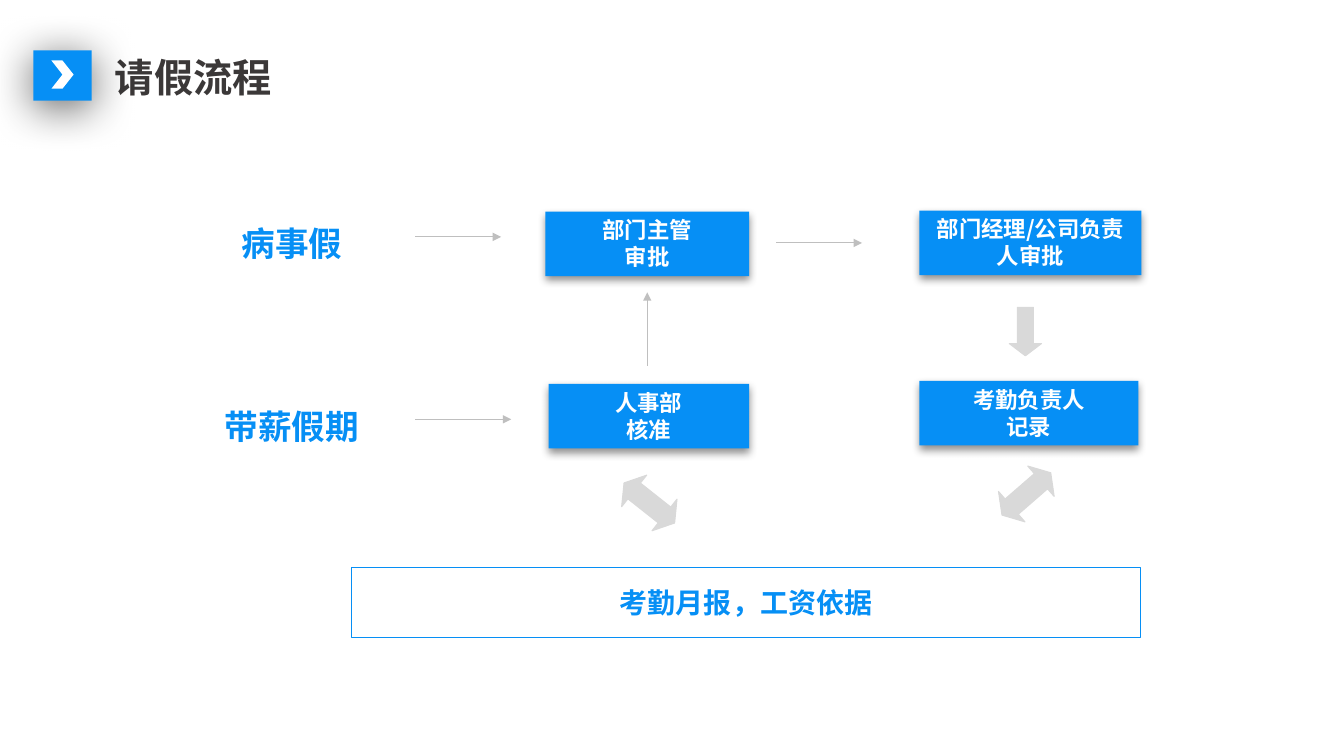
from dataclasses import dataclass

import pptx
import pptx.dml.color
import pptx.enum.shapes
import pptx.enum.text
import pptx.oxml
import pptx.oxml.ns
import pptx.util
from pptx.util import Inches

SHAPE = pptx.enum.shapes.MSO_SHAPE
ALIGN = pptx.enum.text.PP_ALIGN
ANCHOR = pptx.enum.text.MSO_ANCHOR
AUTO = pptx.enum.text.MSO_AUTO_SIZE
NS = pptx.oxml.ns.nsdecls("a")


@dataclass(frozen=True)
class Theme:
    font: str = "Noto Sans CJK SC"
    blue: str = "068FF5"
    white: str = "FFFFFF"
    dark: str = "3B3838"
    line: str = "BFBFBF"
    arrow: str = "D9D9D9"
    shadow: str = "000000"
    title_size: int = 28
    label_size: int = 24
    result_size: int = 20
    step_size: int = 16
    line_width: float = 0.75


THEME = Theme()


def rgb(color):
    return pptx.dml.color.RGBColor.from_string(color)


def place(sp, left, top, width, height):
    sp.left, sp.top = Inches(left), Inches(top)
    sp.width, sp.height = Inches(width), Inches(height)


def write(sp, lines, size, color, align=ALIGN.CENTER, anchor=ANCHOR.TOP,
          wrap=True, auto=AUTO.SHAPE_TO_FIT_TEXT):
    """Fill a shape with bold paragraphs, one per line."""
    tf = sp.text_frame
    tf.text = "\n".join(lines)
    tf.word_wrap = wrap
    tf.auto_size = auto
    tf.vertical_anchor = anchor
    for p in tf.paragraphs:
        p.alignment = align
        p.font.size = pptx.util.Pt(size)
        p.font.bold = True
        p.font.color.rgb = rgb(color)
        p.font.name = THEME.font
        # East Asian text needs its own typeface entry
        latin = p.font._element.find(pptx.oxml.ns.qn("a:latin"))
        latin.addnext(pptx.oxml.parse_xml(
            f'<a:ea {NS} typeface="{THEME.font}"/>'))


def add_block(slide, kind, box, fill=None, line=None):
    sp = slide.shapes.add_shape(kind, *(Inches(v) for v in box))
    sp.shadow.inherit = False
    if fill:
        sp.fill.solid()
        sp.fill.fore_color.rgb = rgb(fill)
    else:
        sp.fill.background()
    if line:
        sp.line.color.rgb = rgb(line)
        sp.line.width = pptx.util.Pt(THEME.line_width)
    else:
        sp.line.fill.background()
    return sp


def add_shadow(sp, opacity, blur, distance):
    """Cast a soft shadow straight down; blur and distance in points."""
    effects = sp._element.spPr.find(pptx.oxml.ns.qn("a:effectLst"))
    effects.append(pptx.oxml.parse_xml(
        f'<a:outerShdw {NS} blurRad="{pptx.util.Pt(blur)}" '
        f'dist="{pptx.util.Pt(distance)}" dir="5400000" algn="t" '
        f'rotWithShape="0"><a:srgbClr val="{THEME.shadow}">'
        f'<a:alpha val="{opacity * 1000}"/></a:srgbClr></a:outerShdw>'))


def add_title(slide, text):
    title = slide.shapes.title
    place(title, 1.04, 0.53, 1.77, 0.53)
    write(title, [text], THEME.title_size, THEME.dark, ALIGN.LEFT, wrap=False)
    title.text_frame.paragraphs[0].line_spacing = 0.9
    badge = add_block(slide, SHAPE.RECTANGLE, (0.33, 0.5, 0.58, 0.5), THEME.blue)
    add_shadow(badge, 62, 32, 5)
    add_block(slide, SHAPE.CHEVRON, (0.51, 0.6, 0.22, 0.28), THEME.white)


def add_label(slide, text, top):
    sp = slide.shapes.add_textbox(
        Inches(1.81), Inches(top), Inches(2.17), Inches(0.5))
    write(sp, [text], THEME.label_size, THEME.blue)


def add_step(slide, lines, left, top, width):
    sp = add_block(slide, SHAPE.RECTANGLE, (left, top, width, 0.64), THEME.blue)
    add_shadow(sp, 43, 6, 3)
    write(sp, lines, THEME.step_size, THEME.white)


def add_thin_arrow(slide, x1, y1, x2, y2):
    cx = slide.shapes.add_connector(
        pptx.enum.shapes.MSO_CONNECTOR.STRAIGHT,
        Inches(x1), Inches(y1), Inches(x2), Inches(y2))
    cx.line.color.rgb = rgb(THEME.line)
    cx.line.width = pptx.util.Pt(THEME.line_width)
    cx.line._get_or_add_ln().append(
        pptx.oxml.parse_xml(f'<a:tailEnd {NS} type="triangle"/>'))
    cx._element.spPr.append(pptx.oxml.parse_xml(f"<a:effectLst {NS}/>"))


def add_block_arrow(slide, kind, box, head, rotation=0):
    sp = add_block(slide, kind, box, THEME.arrow, THEME.arrow)
    sp.adjustments[0] = 0.5
    sp.adjustments[1] = head
    sp.rotation = rotation


def main():
    prs = pptx.Presentation()
    prs.slide_width, prs.slide_height = Inches(13.33), Inches(7.5)
    slide = prs.slides.add_slide(prs.slide_layouts.get_by_name("Title Only"))

    add_title(slide, "请假流程")

    # Kinds of leave
    add_label(slide, "病事假", 2.16)
    add_label(slide, "带薪假期", 3.98)

    # Approval steps
    for lines, left, top, width in (
        (["部门主管", "审批"], 5.41, 2.1, 2.02),
        (["部门经理/公司负责人审批"], 9.12, 2.09, 2.2),
        (["考勤负责人", "记录"], 9.12, 3.78, 2.17),
        (["人事部", "核准"], 5.44, 3.81, 1.99),
    ):
        add_step(slide, lines, left, top, width)

    # Flow between the steps
    for ends in (
        (4.12, 2.35, 4.97, 2.35),
        (7.7, 2.41, 8.55, 2.41),
        (4.12, 4.16, 5.07, 4.16),
        (6.42, 3.63, 6.42, 2.9),
    ):
        add_thin_arrow(slide, *ends)
    add_block_arrow(slide, SHAPE.DOWN_ARROW, (10.01, 3.05, 0.32, 0.48), 0.38)

    # Monthly report, linked both ways to the lower steps
    report = add_block(slide, SHAPE.RECTANGLE, (3.49, 5.63, 7.82, 0.69),
                       line=THEME.blue)
    write(report, ["考勤月报，工资依据"], THEME.result_size, THEME.blue,
          anchor=ANCHOR.MIDDLE, wrap=False, auto=AUTO.NONE)
    for left, top, rotation in ((9.86, 4.7, 319), (6.12, 4.79, 38.4)):
        add_block_arrow(slide, SHAPE.LEFT_RIGHT_ARROW,
                        (left, top, 0.64, 0.4), 0.32, rotation)

    prs.save("out.pptx")


if __name__ == "__main__":
    main()
